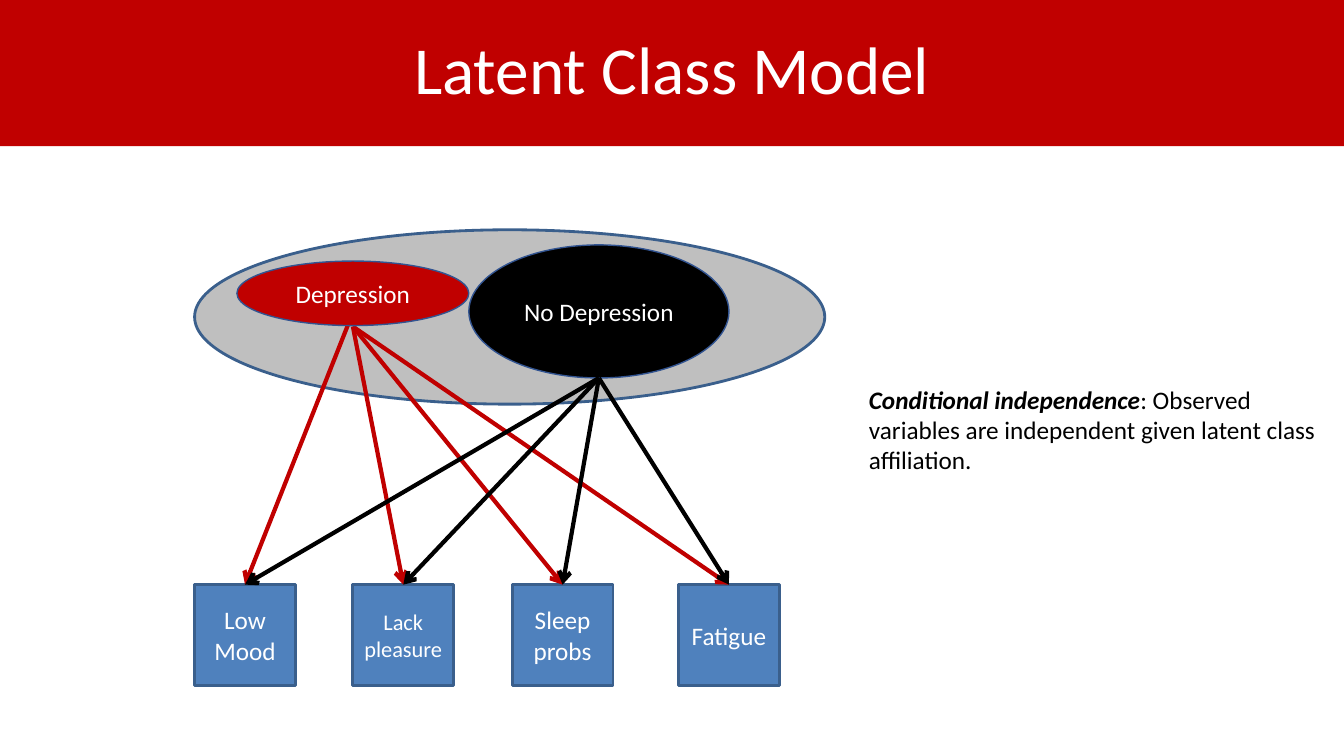
import pptx
import pptx.util
import pptx.dml.color
import pptx.enum.shapes
import pptx.enum.text
import pptx.oxml
import pptx.oxml.ns
import lxml.etree

COLORS = {"red": "C00000", "black": "000000", "white": "FFFFFF", "gray": "BFBFBF",
          "blue": "4F81BD", "edge": "3A5F8C", "class_edge": "325491"}
KINDS = pptx.enum.shapes.MSO_SHAPE
ALIGN = pptx.enum.text.PP_ALIGN

deck = pptx.Presentation()
deck.slide_width = pptx.util.Inches(13.33)
deck.slide_height = pptx.util.Inches(7.5)
page = deck.slides.add_slide(deck.slide_layouts[6])
column = deck.slide_width / 13.33
row = deck.slide_height / 7.5


def write(box, text, size=18, color="white", align=ALIGN.CENTER, bold=False, italic=False):
    box.text_frame.word_wrap = True
    para = box.text_frame.paragraphs[0]
    para.alignment = align
    span = para.add_run()
    span.text = text
    span.font.name = "Calibri"
    span.font.size = pptx.util.Pt(size)
    span.font.bold = bold
    span.font.italic = italic
    span.font.color.rgb = pptx.dml.color.RGBColor.from_string(COLORS[color])
    return para


def draw(kind, left, top, width, height, fill, edge=None, weight=2):
    shape = page.shapes.add_shape(kind, int(left * column), int(top * row),
                                  int(width * column), int(height * row))
    shape.shadow.inherit = False
    shape.fill.solid()
    shape.fill.fore_color.rgb = pptx.dml.color.RGBColor.from_string(COLORS[fill])
    if edge:
        shape.line.color.rgb = pptx.dml.color.RGBColor.from_string(COLORS[edge])
        shape.line.width = pptx.util.Pt(weight)
    else:
        shape.line.fill.background()
    shape.text_frame.vertical_anchor = pptx.enum.text.MSO_ANCHOR.MIDDLE
    return shape


title = draw(KINDS.RECTANGLE, 0, 0, 13.33, 1.45, "red")
write(title, "Latent Class Model", size=48).line_spacing = 0.9
draw(KINDS.OVAL, 1.93, 2.28, 6.25, 1.73, "gray", "edge")

symptoms = []
for left, name, size in [(1.93, "Low Mood", 18), (3.5, "Lack pleasure", 16),
                         (5.08, "Sleep probs", 18), (6.73, "Fatigue", 18)]:
    symptom = draw(KINDS.RECTANGLE, left, 5.8, 1, 1, "blue", "edge")
    write(symptom, name, size=size)
    symptoms.append(symptom)

arrows = {}
for color, start, tops in [("red", 3.5, [3.1, 3.24, 3.24, 3.24]),
                           ("black", 5.94, [3.75] * 4)]:
    arrows[color] = []
    for symptom, top in zip(symptoms, tops):
        arrow = page.shapes.add_connector(
            pptx.enum.shapes.MSO_CONNECTOR.STRAIGHT,
            int(start * column), int(top * row), 0, 0)
        arrow.end_connect(symptom, 0)
        arrow.line.color.rgb = pptx.dml.color.RGBColor.from_string(COLORS[color])
        arrow.line.width = pptx.util.Pt(3)
        lxml.etree.SubElement(arrow.line._get_or_add_ln(),
                              pptx.oxml.ns.qn("a:tailEnd"), type="arrow")
        lxml.etree.SubElement(arrow._element.spPr, pptx.oxml.ns.qn("a:effectLst"))
        arrows[color].append(arrow)

for name, color, left, top, width, height in [
        ("Depression", "red", 2.35, 2.59, 2.3, 0.64),
        ("No Depression", "black", 4.65, 2.43, 2.58, 1.32)]:
    group = draw(KINDS.OVAL, left, top, width, height, color, "class_edge", 1)
    write(group, name)

for arrow in arrows["black"]:
    page.shapes._spTree.append(arrow._element)

note = page.shapes.add_textbox(int(8.52 * column), int(3.76 * row),
                               int(4.76 * column), int(1.01 * row))
note.text_frame.auto_size = pptx.enum.text.MSO_AUTO_SIZE.SHAPE_TO_FIT_TEXT
write(note, "Conditional independence", color="black", align=ALIGN.LEFT, bold=True, italic=True)
write(note, ": Observed variables are independent given latent class affiliation.",
      color="black", align=ALIGN.LEFT)

deck.save("out.pptx")
